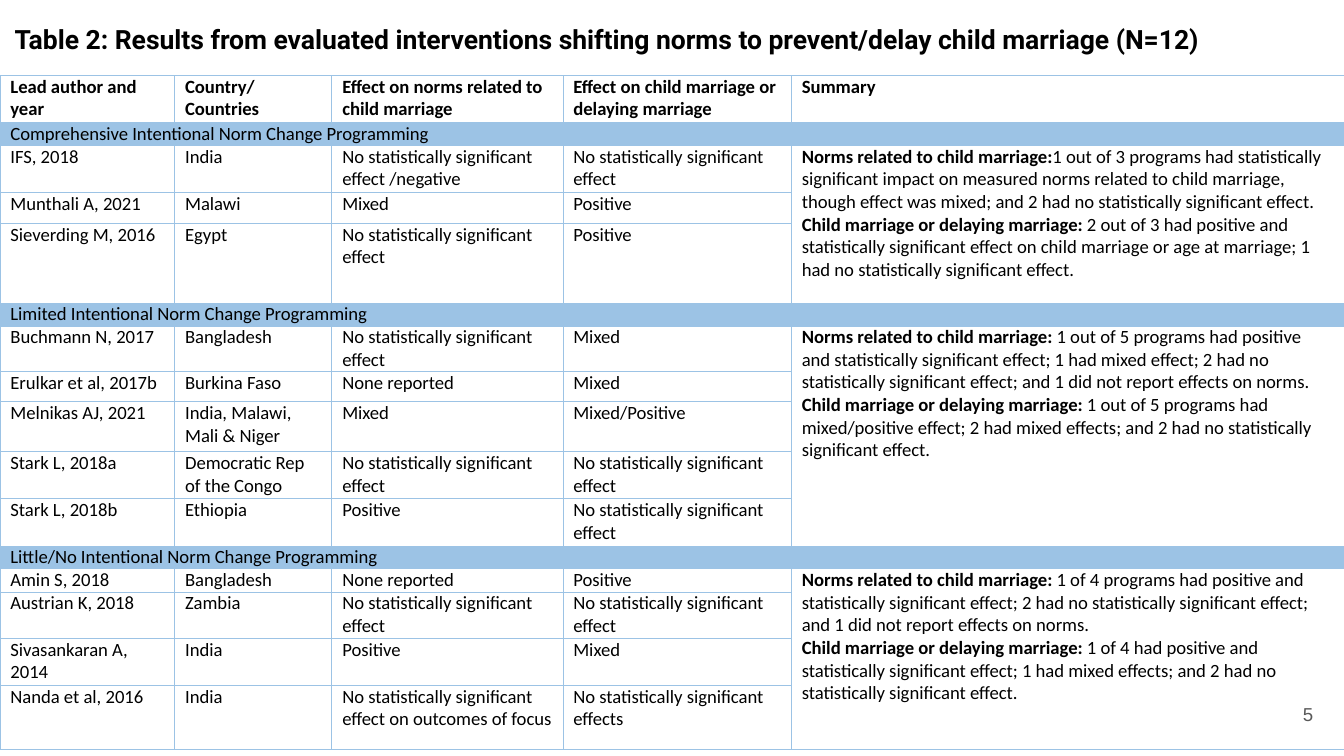
import pptx
import pptx.dml.color
import pptx.enum.text
import pptx.oxml
import pptx.oxml.ns
import pptx.util
from pptx.util import Pt

BLACK = pptx.dml.color.RGBColor(0x00, 0x00, 0x00)
GREY = pptx.dml.color.RGBColor(0x59, 0x59, 0x59)
BLUE = pptx.dml.color.RGBColor(0x9C, 0xC3, 0xE5)

COLUMN_WIDTHS = [93.6, 84.2, 123.8, 122.4, 296]
ROW_HEIGHTS = [25.2, 12.3, 25.2, 16.6, 42.6, 12.3, 24.5, 16.2,
               26.8, 25.2, 25.2, 12.3, 12.5, 24.8, 25.2, 34.3]

HEADERS = ["Lead author and year", "Country/\nCountries", "Effect on norms related to child marriage",
           "Effect on child marriage or delaying marriage", "Summary"]
NORMS = "Norms related to child marriage:"
MARRIAGE = "Child marriage or delaying marriage:"
NO_EFFECT = "No statistically significant effect"

# Each group: heading, studies, summary after the norms and marriage labels
GROUPS = [
    ("Comprehensive Intentional Norm Change Programming",
     [("IFS, 2018", "India", NO_EFFECT + " /negative", NO_EFFECT),
      ("Munthali A, 2021", "Malawi", "Mixed", "Positive"),
      ("Sieverding M, 2016", "Egypt", NO_EFFECT, "Positive")],
     ("1 out of 3 programs had statistically significant impact on measured norms related to "
      "child marriage, though effect was mixed; and 2 had no statistically significant effect.",
      " 2 out of 3 had positive and statistically significant effect on child marriage or age "
      "at marriage; 1 had no statistically significant effect.")),
    ("Limited Intentional Norm Change Programming",
     [("Buchmann N, 2017", "Bangladesh", NO_EFFECT, "Mixed"),
      ("Erulkar et al, 2017b", "Burkina Faso", "None reported", "Mixed"),
      ("Melnikas AJ, 2021", "India, Malawi, Mali & Niger", "Mixed", "Mixed/Positive"),
      ("Stark L, 2018a", "Democratic Rep of the Congo", NO_EFFECT, NO_EFFECT),
      ("Stark L, 2018b", "Ethiopia", "Positive", NO_EFFECT)],
     (" 1 out of 5 programs had positive and statistically significant effect; 1 had mixed effect; "
      "2 had no statistically significant effect; and 1 did not report effects on norms.",
      " 1 out of 5 programs had mixed/positive effect; 2 had mixed effects; and 2 had no "
      "statistically significant effect.")),
    ("Little/No Intentional Norm Change Programming",
     [("Amin S, 2018", "Bangladesh", "None reported", "Positive"),
      ("Austrian K, 2018", "Zambia", NO_EFFECT, NO_EFFECT),
      ("Sivasankaran A, 2014", "India", "Positive", "Mixed"),
      ("Nanda et al, 2016", "India", NO_EFFECT + " on outcomes of focus", NO_EFFECT + "s")],
     (" 1 of 4 programs had positive and statistically significant effect; 2 had no statistically "
      "significant effect; and 1 did not report effects on norms.",
      " 1 of 4 had positive and statistically significant effect; 1 had mixed effects; and 2 had "
      "no statistically significant effect.")),
]


def set_font(font, name, size, color, bold=False):
    font.name = name
    font.size = Pt(size)
    font.color.rgb = color
    font.bold = bold


def add_text(slide, box, text):
    """Add a text box with even margins and return its frame."""
    frame = slide.shapes.add_textbox(*map(Pt, box)).text_frame
    frame.word_wrap = True
    frame.margin_left = frame.margin_right = Pt(7.2)
    frame.margin_top = frame.margin_bottom = Pt(7.2)
    frame.text = text
    return frame


def add_title(slide, box):
    frame = add_text(slide, box, "Table 2: Results from evaluated interventions shifting norms "
                                 "to prevent/delay child marriage (N=12)")
    set_font(frame.paragraphs[0].font, "Roboto", 14.2, BLACK, bold=True)


def add_page_number(slide, box):
    frame = add_text(slide, box, "5")
    frame.vertical_anchor = pptx.enum.text.MSO_ANCHOR.MIDDLE
    frame.paragraphs[0].alignment = pptx.enum.text.PP_ALIGN.RIGHT
    set_font(frame.paragraphs[0].font, "Arial", 10, GREY)


def format_cell(cell):
    """Give a cell its margins, thin blue borders and no fill."""
    cell.margin_left = cell.margin_right = Pt(5.6)
    cell.margin_top = cell.margin_bottom = 0
    properties = cell._tc.get_or_add_tcPr()
    for side in ("lnL", "lnR", "lnT", "lnB"):
        properties.append(pptx.oxml.parse_xml(
            f'<a:{side} {pptx.oxml.ns.nsdecls("a")} w="{Pt(0.5)}"><a:solidFill>'
            f'<a:srgbClr val="{BLUE}"/></a:solidFill></a:{side}>'))
    cell.fill.background()


def write_cell(cell, text, bold=False):
    cell.text = text
    for paragraph in cell.text_frame.paragraphs:
        set_font(paragraph.font, "Calibri", 10, BLACK, bold)


def write_summary(cell, findings):
    write_cell(cell, "\n".join((NORMS, MARRIAGE)))
    for paragraph, finding in zip(cell.text_frame.paragraphs, findings):
        paragraph.runs[0].font.bold = True
        paragraph.add_run().text = finding


def add_results_table(slide, box):
    table = slide.shapes.add_table(len(ROW_HEIGHTS), len(COLUMN_WIDTHS), *map(Pt, box)).table
    table.first_row = table.horz_banding = False
    for column, width in zip(table.columns, COLUMN_WIDTHS):
        column.width = Pt(width)
    for row, height in zip(table.rows, ROW_HEIGHTS):
        row.height = Pt(height)
    for cell in table.iter_cells():
        format_cell(cell)
        write_cell(cell, "")

    # Header row
    for column, header in enumerate(HEADERS):
        write_cell(table.cell(0, column), header, bold=True)

    # Groups: a blue band, then studies beside one merged summary
    last_column = len(COLUMN_WIDTHS) - 1
    row = 1
    for heading, studies, findings in GROUPS:
        band = table.cell(row, 0)
        band.merge(table.cell(row, last_column))
        band.fill.solid()
        band.fill.fore_color.rgb = BLUE
        write_cell(band, heading)

        summary = table.cell(row + 1, last_column)
        summary.merge(table.cell(row + len(studies), last_column))
        write_summary(summary, findings)
        for study_row, study in enumerate(studies, row + 1):
            for column, text in enumerate(study):
                write_cell(table.cell(study_row, column), text)
        row += len(studies) + 1


def main():
    presentation = pptx.Presentation()
    presentation.slide_width = Pt(720)
    presentation.slide_height = Pt(405)
    slide = presentation.slides.add_slide(presentation.slide_layouts[6])
    add_title(slide, (0.7, 5, 671, 31))
    add_page_number(slide, (667.4, 367.2, 43.2, 31))
    add_results_table(slide, (0, 40.5, sum(COLUMN_WIDTHS), sum(ROW_HEIGHTS)))
    presentation.save("out.pptx")


if __name__ == "__main__":
    main()
